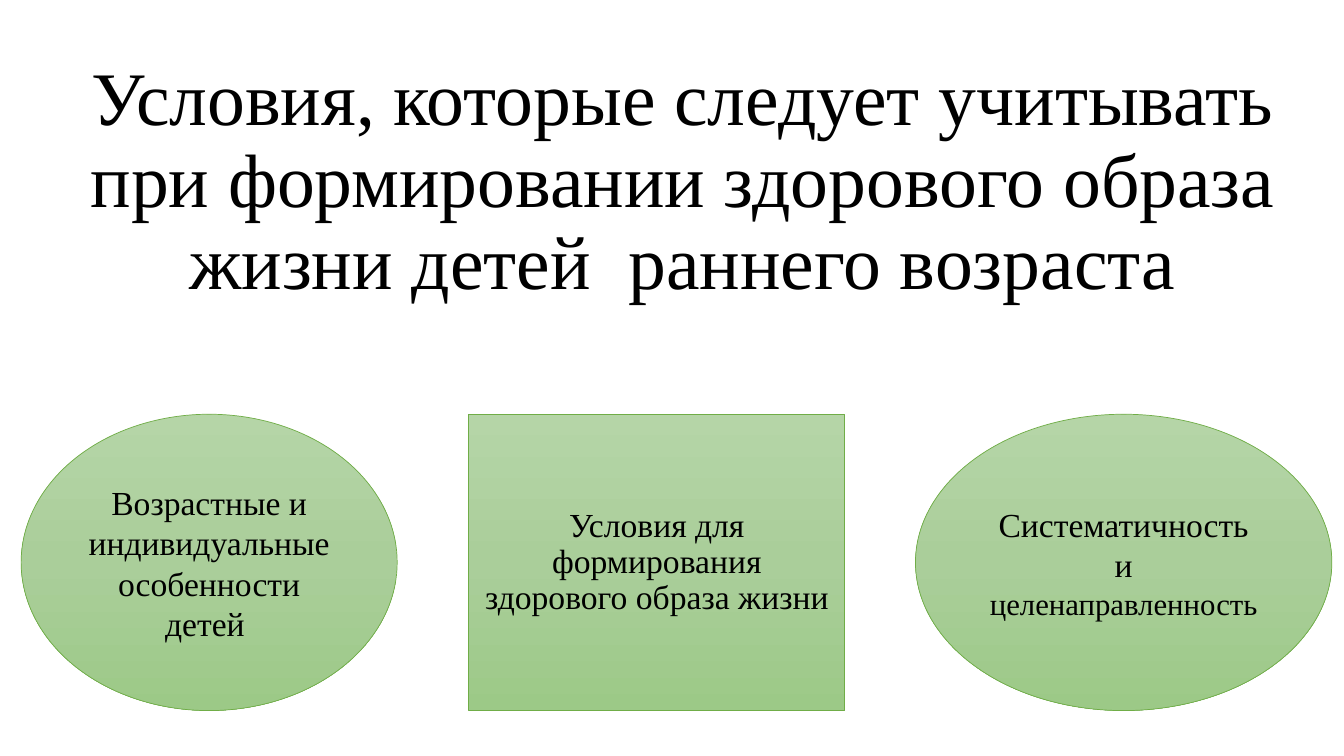
from copy import deepcopy

from pptx import Presentation
from pptx.dml.color import RGBColor
from pptx.enum.shapes import MSO_SHAPE as Shape
from pptx.enum.text import MSO_ANCHOR as Anchor, PP_ALIGN as Align
from pptx.oxml.ns import qn
from pptx.util import Inches, Pt

BLACK = RGBColor(0x00, 0x00, 0x00)
GREEN_LINE = RGBColor(0x70, 0xAD, 0x47)
GREEN_STOPS = (
    (0, RGBColor(0xB5, 0xD5, 0xA7)),
    (0.5, RGBColor(0xAA, 0xCE, 0x9A)),
    (1, RGBColor(0x9C, 0xC9, 0x87)),
)
WIDTH, HEIGHT = 13.33, 7.5
LEFT = 0.21 / WIDTH
CARD_TOP, CARD_HEIGHT = 4.11 / HEIGHT, 2.94 / HEIGHT


class SlideBuilder:
    font = "Times New Roman"

    def __init__(self, prs):
        self.prs = prs
        self.s = prs.slides.add_slide(prs.slide_layouts[6])

    def box(self, x, y, w, h):
        sw, sh = self.prs.slide_width, self.prs.slide_height
        return round(x * sw), round(y * sh), round(w * sw), round(h * sh)

    def add_text(self, sp, runs, anchor, spacing=None):
        tf = sp.text_frame
        tf.word_wrap = True
        tf.vertical_anchor = anchor
        p = tf.paragraphs[0]
        p.alignment = Align.CENTER
        p.line_spacing = spacing
        for text, size in runs:
            r = p.add_run()
            r.text = text
            r.font.name = self.font
            r.font.size = Pt(size)
            r.font.color.rgb = BLACK

    def title(self, x, y, w, h, text):
        sp = self.s.shapes.add_textbox(*self.box(x, y, w, h))
        self.add_text(sp, [(text, 54)], Anchor.BOTTOM, 0.9)

    def card(self, kind, x, w, runs, spacing=None):
        sp = self.s.shapes.add_shape(kind, *self.box(x, CARD_TOP, w, CARD_HEIGHT))
        sp.shadow.inherit = False
        sp.line.color.rgb = GREEN_LINE
        sp.line.width = Pt(0.5)
        self.gradient(sp)
        self.add_text(sp, runs, Anchor.MIDDLE, spacing)

    def gradient(self, sp):
        sp.fill.gradient()
        sp.fill.gradient_angle = 270
        stops = sp._element.spPr.find(qn("a:gradFill")).find(qn("a:gsLst"))
        stops.append(deepcopy(stops[-1]))
        for stop, (position, color) in zip(sp.fill.gradient_stops, GREEN_STOPS):
            stop.position = position
            stop.color.rgb = color


def main():
    prs = Presentation()
    prs.slide_width, prs.slide_height = Inches(WIDTH), Inches(HEIGHT)
    slide = SlideBuilder(prs)
    slide.title(
        LEFT, 0.31 / HEIGHT, 1 - LEFT, 2.77 / HEIGHT,
        "Условия, которые следует учитывать при формировании "
        "здорового образа жизни детей  раннего возраста",
    )
    slide.card(Shape.OVAL, LEFT, 3.73 / WIDTH,
               [("Возрастные и индивидуальные особенности детей ", 24)])
    slide.card(Shape.RECTANGLE, 4.65 / WIDTH, 3.73 / WIDTH,
               [("Условия для формирования здорового образа жизни", 24)], 0.9)
    slide.card(Shape.OVAL, 9.08 / WIDTH, 4.13 / WIDTH,
               [("Систематичность и ", 24), ("целенаправленность", 22)])
    prs.save("out.pptx")


if __name__ == "__main__":
    main()
